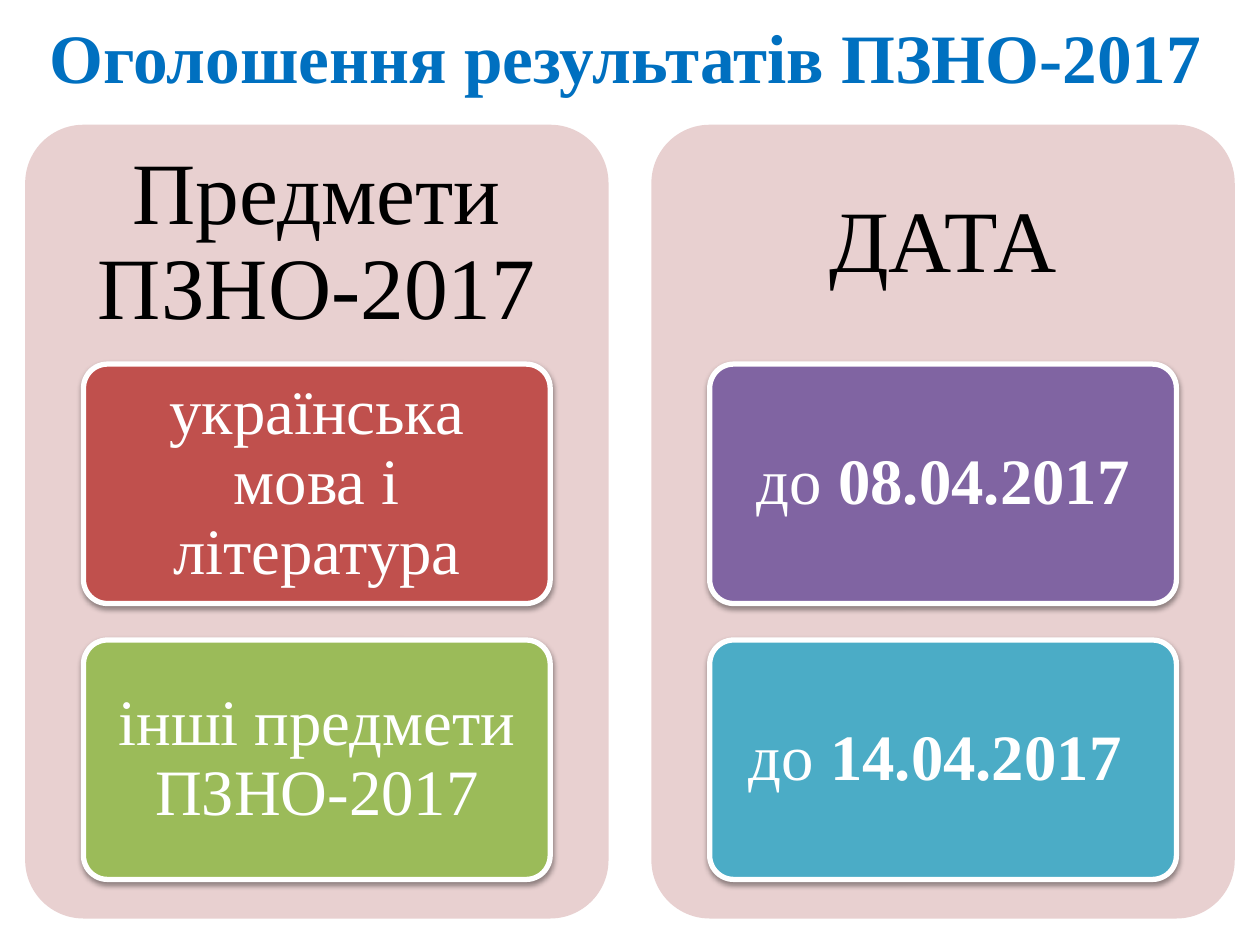
from dataclasses import dataclass

from lxml.etree import SubElement
from pptx import Presentation
from pptx.dml.color import RGBColor
from pptx.enum.shapes import MSO_SHAPE
from pptx.enum.text import MSO_ANCHOR, MSO_AUTO_SIZE, PP_ALIGN
from pptx.oxml.ns import qn
from pptx.util import Inches, Pt


@dataclass(frozen=True)
class Theme:
    font: str = "Times New Roman"
    title: str = "0070C0"
    panel: str = "E8D0D0"
    heading: str = "000000"
    light: str = "FFFFFF"
    red: str = "C0504D"
    green: str = "9BBB59"
    purple: str = "8064A2"
    teal: str = "4BACC6"
    title_size: float = 39.6
    heading_size: float = 50
    card_size: float = 37


THEME = Theme()

# Each column: heading, then cards of (plain text, bold text, fill)
COLUMNS = [
    ("Предмети ПЗНО-2017", [
        ("українська мова і література", "", THEME.red),
        ("інші предмети ПЗНО-2017", "", THEME.green),
    ]),
    ("ДАТА", [
        ("до ", "08.04.2017", THEME.purple),
        ("до ", "14.04.2017 ", THEME.teal),
    ]),
]


def write(tf, runs, size, color, margins=(0.1, 0.05), spacing=0.9):
    """Fill a text frame with one centred paragraph of (text, bold) runs."""
    tf.word_wrap = True
    tf.auto_size = MSO_AUTO_SIZE.NONE
    tf.vertical_anchor = MSO_ANCHOR.MIDDLE
    tf.margin_left = tf.margin_right = Inches(margins[0])
    tf.margin_top = tf.margin_bottom = Inches(margins[1])
    p = tf.paragraphs[0]
    p.alignment = PP_ALIGN.CENTER
    p.line_spacing = spacing
    for text, bold in runs:
        r = p.add_run()
        r.text = text
        r.font.name = THEME.font
        r.font.size = Pt(size)
        r.font.bold = bold
        r.font.color.rgb = RGBColor.from_string(color)


def add_round_box(slide, x, y, w, h, fill):
    sp = slide.shapes.add_shape(MSO_SHAPE.ROUNDED_RECTANGLE,
                                Inches(x), Inches(y), Inches(w), Inches(h))
    sp.adjustments[0] = 0.1
    sp.shadow.inherit = False
    sp.fill.solid()
    sp.fill.fore_color.rgb = RGBColor.from_string(fill)
    sp.line.fill.background()
    return sp


def add_drop_shadow(sp):
    effects = sp._element.spPr.find(qn("a:effectLst"))
    shadow = SubElement(effects, qn("a:outerShdw"), blurRad=str(Pt(3.1)),
                        dist=str(Pt(1.6)), dir="5400000", rotWithShape="0")
    color = SubElement(shadow, qn("a:srgbClr"), val="000000")
    SubElement(color, qn("a:alpha"), val="38000")


def add_title(slide, x, y, w, h):
    title = slide.shapes.title
    title.left, title.top = Inches(x), Inches(y)
    title.width, title.height = Inches(w), Inches(h)
    write(title.text_frame, [("Оголошення результатів ПЗНО-2017", True)],
          THEME.title_size, THEME.title, spacing=1)


def add_card(slide, x, y, w, h, plain, bold, fill):
    sp = add_round_box(slide, x, y, w, h, fill)
    sp.line.color.rgb = RGBColor.from_string(THEME.light)
    sp.line.width = Pt(3)
    add_drop_shadow(sp)
    runs = [(text, is_bold) for text, is_bold in ((plain, False), (bold, True)) if text]
    write(sp.text_frame, runs, THEME.card_size, THEME.light, (0.1, 0.08))


def add_column(slide, x, y, w, h, heading, cards):
    add_round_box(slide, x, y, w, h, THEME.panel)
    heading_h = 0.3 * h
    box = slide.shapes.add_textbox(Inches(x), Inches(y), Inches(w), Inches(heading_h))
    write(box.text_frame, [(heading, False)],
          THEME.heading_size, THEME.heading, (0.21, 0.21))

    card_w, card_h, gap = 0.8 * w, 1.9, 0.29
    for i, card in enumerate(cards):
        card_y = y + heading_h + 0.01 + i * (card_h + gap)
        add_card(slide, x + (w - card_w) / 2, card_y, card_w, card_h, *card)


def main():
    prs = Presentation()
    prs.slide_width, prs.slide_height = Inches(10), Inches(7.5)
    slide = prs.slides.add_slide(prs.slide_layouts[5])
    add_title(slide, 0.12, 0.21, 9.69, 0.46)

    column_w, gap = 4.63, 0.34
    for i, (heading, cards) in enumerate(COLUMNS):
        add_column(slide, 0.2 + i * (column_w + gap), 0.99, column_w, 6.3, heading, cards)
    prs.save("out.pptx")


if __name__ == "__main__":
    main()
